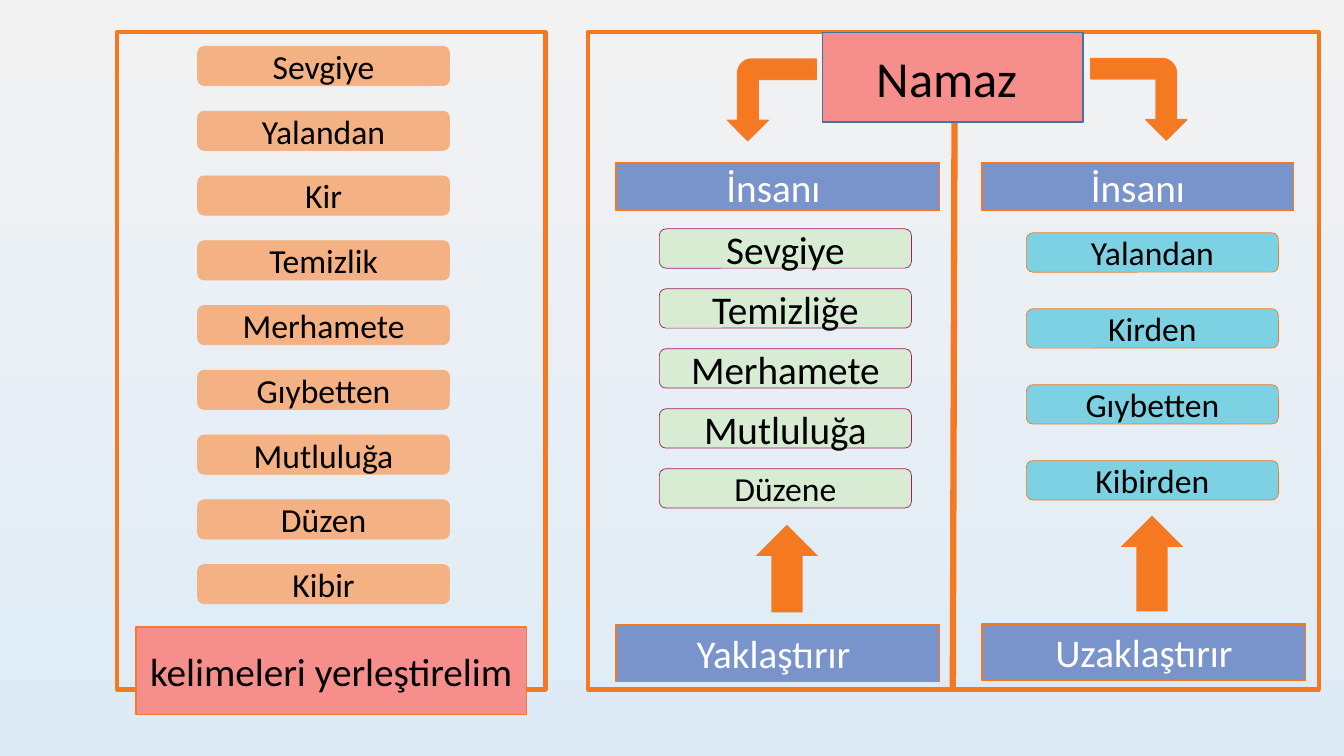
from dataclasses import dataclass

from lxml import etree
from pptx import Presentation
from pptx import util as u
from pptx.dml.color import RGBColor
from pptx.enum import shapes, text
from pptx.oxml import ns
from pptx.slide import Slide

ORANGE, BLUE, CORAL = "F57921", "7993CB", "F68F8B"
BLACK, WHITE = "000000", "FFFFFF"
RECT = shapes.MSO_SHAPE.RECTANGLE
PILL = shapes.MSO_SHAPE.ROUNDED_RECTANGLE
ARROW = shapes.MSO_SHAPE.RIGHT_ARROW
BENT = shapes.MSO_SHAPE.BENT_ARROW
PILL_WIDTH, PILL_HEIGHT = 2.5, 0.39


@dataclass
class Box:
    at: tuple[float, float, float, float]
    fill: str | None = None
    line: str | None = ORANGE
    width: float = 1
    words: str = ""
    size: int = 28
    color: str = BLACK
    kind: shapes.MSO_SHAPE = RECT
    rotation: float = 0
    bend: float | None = None
    flip: bool = False


@dataclass
class WordColumn:
    left: float
    first_top: float
    last_top: float
    fill: str
    line: str
    words: list[str]
    sizes: list[int]


def rgb(value: str) -> RGBColor:
    return RGBColor.from_string(value)


def paint(sp, box: Box) -> None:
    """Apply the fill, outline and text of a box to a shape."""
    if box.fill:
        sp.fill.solid()
        sp.fill.fore_color.rgb = rgb(box.fill)
    else:
        sp.fill.background()
    if box.line:
        sp.line.color.rgb = rgb(box.line)
        sp.line.width = u.Pt(box.width)
    else:
        sp.line.fill.background()
    if not box.words:
        return
    tf = sp.text_frame
    frame_format = {"word_wrap": True, "auto_size": text.MSO_AUTO_SIZE.NONE,
                    "vertical_anchor": text.MSO_ANCHOR.MIDDLE}
    for name, value in frame_format.items():
        setattr(tf, name, value)
    p = tf.paragraphs[0]
    p.alignment = text.PP_ALIGN.CENTER
    r = p.add_run()
    r.text = box.words
    for name, value in {"name": "Calibri", "size": u.Pt(box.size)}.items():
        setattr(r.font, name, value)
    r.font.color.rgb = rgb(box.color)


def draw_box(s: Slide, box: Box) -> None:
    sp = s.shapes.add_shape(box.kind, *map(u.Inches, box.at))
    sp.shadow.inherit = False
    sp.rotation = box.rotation
    if box.bend is not None:
        sp.adjustments[3] = box.bend
    if box.flip:
        sp.element.spPr.find(ns.qn("a:xfrm")).set("flipV", "1")
    paint(sp, box)


def draw_column(s: Slide, column: WordColumn) -> None:
    step = (column.last_top - column.first_top) / (len(column.words) - 1)
    for i, (word, size) in enumerate(zip(column.words, column.sizes)):
        at = (column.left, column.first_top + i * step, PILL_WIDTH, PILL_HEIGHT)
        draw_box(s, Box(at, column.fill, column.line, 0.5, word, size, kind=PILL))


def draw_divider(s: Slide) -> None:
    ends = map(u.Inches, (9.47, 0.32, 9.45, 6.84))
    line = s.shapes.add_connector(shapes.MSO_CONNECTOR.STRAIGHT, *ends)
    line.line.color.rgb = rgb(ORANGE)
    line.line.width = u.Pt(4.5)
    etree.SubElement(line.element.spPr, ns.qn("a:effectLst"))


def draw_title(s: Slide, box: Box) -> None:
    title = s.shapes.title
    for name, value in zip(("left", "top", "width", "height"), box.at):
        setattr(title, name, u.Inches(value))
    paint(title, box)
    # Bring the title in front of the frame and the divider
    title.element.getparent().append(title.element)


FRAMES = [Box((left, 0.32, width, 6.52), width=3)
          for left, width in ((5.83, 7.25), (1.16, 4.25))]

HEADINGS = [
    Box((6.11, 1.61, 3.21, 0.48), BLUE, words="İnsanı ", color=WHITE),
    Box((9.74, 1.61, 3.09, 0.48), BLUE, words="İnsanı", color=WHITE),
    Box((6.11, 6.2, 3.21, 0.56), BLUE, words="Yaklaştırır ", color=WHITE),
    Box((9.74, 6.19, 3.21, 0.56), BLUE, words="Uzaklaştırır", color=WHITE),
]

COLUMNS = [
    WordColumn(10.18, 2.31, 4.57, "7CD2E3", ORANGE,
               ["Yalandan", "Kirden", "Gıybetten", "Kibirden"], [24] * 4),
    WordColumn(6.54, 2.27, 4.65, "D8ECD3", "9C2068",
               ["Sevgiye", "Temizliğe", "Merhamete", "Mutluluğa", "Düzene"],
               [28] * 4 + [24]),
    WordColumn(1.96, 0.46, 5.6, "F4B183", "F4B183",
               ["Sevgiye", "Yalandan", "Kir", "Temizlik", "Merhamete",
                "Gıybetten", "Mutluluğa", "Düzen", "Kibir"], [24] * 9),
]

ARROWS = [
    Box((7.37, 5.33, 0.87, 0.62), ORANGE, None, kind=ARROW, rotation=270),
    Box((10.95, 5.28, 0.95, 0.62), ORANGE, None, kind=ARROW, rotation=270),
    Box((10.89, 0.51, 0.81, 0.95), ORANGE, "F47C2E", kind=BENT, rotation=90,
        bend=0.18),
    Box((7.25, 0.55, 0.81, 0.88), ORANGE, "F47C2E", kind=BENT, rotation=90,
        bend=0.17, flip=True),
]

TITLE = Box((8.16, 0.32, 2.58, 0.89), CORAL, "43739E", words="Namaz ", size=36)
TASK = Box((1.35, 6.22, 3.87, 0.87), CORAL, "ED7D31",
           words="kelimeleri yerleştirelim ")


def main() -> None:
    prs = Presentation()
    prs.slide_width, prs.slide_height = u.Inches(13.33), u.Inches(7.5)
    s = prs.slides.add_slide(prs.slide_layouts[5])

    # Background
    fill = s.background.fill
    fill.gradient()
    fill.gradient_angle = 270
    for stop, color in zip(fill.gradient_stops, ("F2F2F2", "DEEBF7")):
        stop.color.rgb = rgb(color)

    # Frames, divider and headings
    draw_divider(s)
    for box in FRAMES + HEADINGS:
        draw_box(s, box)

    # Word columns
    for column in COLUMNS:
        draw_column(s, column)

    # Title, arrows and task
    draw_title(s, TITLE)
    for box in [*ARROWS, TASK]:
        draw_box(s, box)

    prs.save("out.pptx")


if __name__ == "__main__":
    main()
